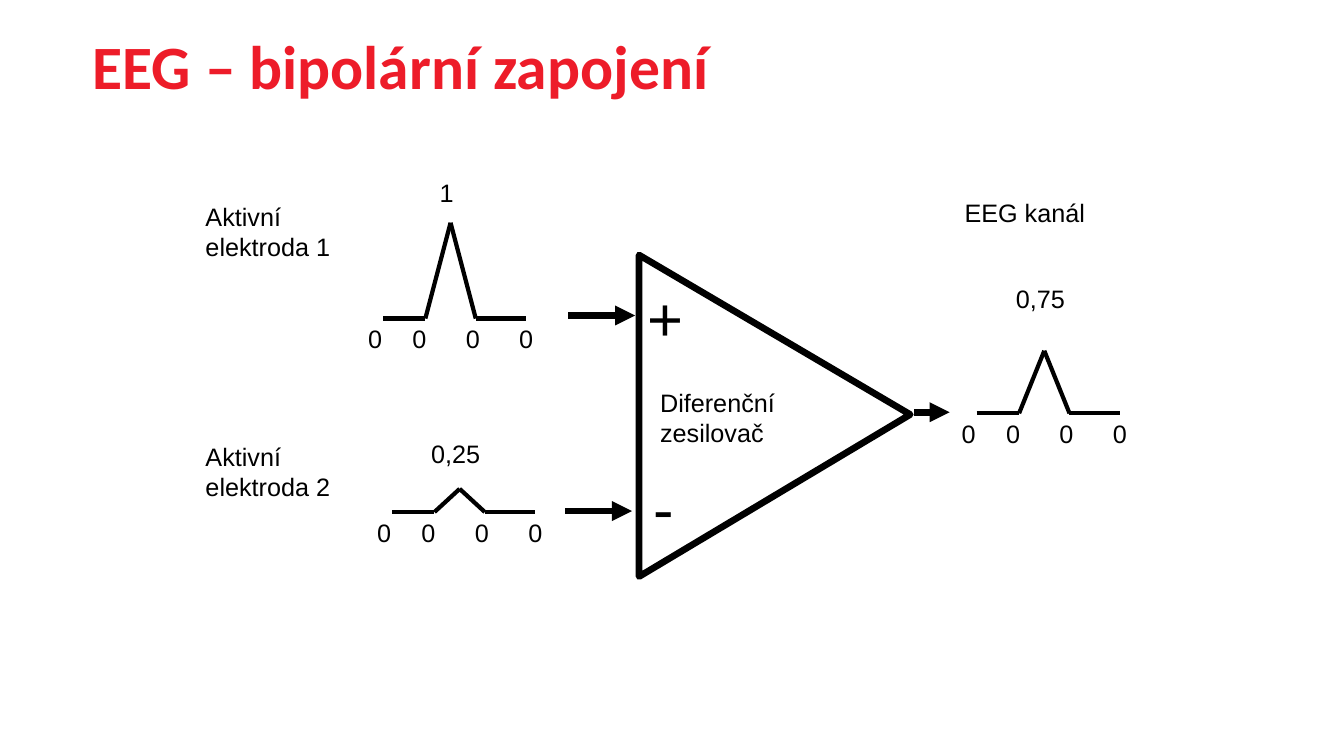
from itertools import pairwise

from lxml import etree
from pptx import Presentation
from pptx.dml.color import RGBColor
from pptx.enum.shapes import MSO_CONNECTOR, MSO_SHAPE
from pptx.enum.text import MSO_ANCHOR, MSO_AUTO_SIZE, PP_ALIGN
from pptx.oxml.ns import qn
from pptx.util import Inches, Pt

STRAIGHT = MSO_CONNECTOR.STRAIGHT
TRIANGLE = MSO_SHAPE.ISOSCELES_TRIANGLE
TOP = MSO_ANCHOR.TOP
FIT = MSO_AUTO_SIZE.SHAPE_TO_FIT_TEXT
NO_FIT = MSO_AUTO_SIZE.NONE
LEFT, CENTER = PP_ALIGN.LEFT, PP_ALIGN.CENTER

BLACK = RGBColor(0x00, 0x00, 0x00)
RED = RGBColor(0xED, 0x1C, 0x29)
COLS, ROWS = 133.33, 75
CELL = Inches(0.1)
THICK, THIN = 4.75, 3
KNOTS = (0, 4.2, 6.7, 9.2, 14.2)
ZEROS = (-0.8, 3.6, 8.9, 14.2)


def grid(*cells):
    """Turn counts of grid cells into lengths."""
    return [round(cell * CELL) for cell in cells]


def style(para, size, name="Arial", color=BLACK, bold=False):
    """Set the font of a paragraph."""
    font = para.font
    font.size, font.name, font.bold = Pt(size), name, bold
    font.color.rgb = color


def add_text(shapes, text, box, size=18, align=LEFT, wrap=True):
    """Add a text box that grows with its text."""
    frame = shapes.add_textbox(*grid(*box)).text_frame
    frame.word_wrap = wrap
    frame.auto_size = FIT
    para = frame.paragraphs[0]
    para.text = text
    para.alignment = align
    style(para, size)


def add_mark(shapes, text, mid, top):
    """Add a short label centred on a column."""
    add_text(shapes, text, (mid - 3.45, top, 6.9, 4), align=CENTER, wrap=False)


def add_line(shapes, start, end, width):
    """Add a plain black line."""
    line = shapes.add_connector(STRAIGHT, *grid(*start, *end))
    line.line.color.rgb = BLACK
    line.line.width = Pt(width)
    etree.SubElement(line._element.spPr, qn("a:effectLst"))
    return line


def add_arrow(shapes, left, row, length):
    """Add a thick arrow that points right."""
    line = add_line(shapes, (left, row), (left + length, row), THICK)
    etree.SubElement(line.line._get_or_add_ln(), qn("a:tailEnd"), type="triangle")


def add_wave(slide, left, base, height, peak, top):
    """Add a grouped spike with its peak and zero labels."""
    shapes = slide.shapes.add_group_shape().shapes
    rows = (base, base, base - height, base, base)
    points = [(left + knot, row) for knot, row in zip(KNOTS, rows)]
    for start, end in pairwise(points):
        add_line(shapes, start, end, THIN)
    add_mark(shapes, peak, left + 6.3, top)
    for shift in ZEROS:
        add_mark(shapes, "0", left + shift, base)


def add_amp(shapes, left, top, width, height):
    """Add the amplifier triangle that points right."""
    box = (left + (width - height) / 2, top + (height - width) / 2, height, width)
    amp = shapes.add_shape(TRIANGLE, *grid(*box))
    amp.rotation = 90
    amp.adjustments[0] = 0.496
    amp.shadow.inherit = False
    amp.fill.background()
    amp.line.color.rgb = BLACK
    amp.line.width = Pt(THICK)


def set_title(slide, text):
    """Fill and place the title."""
    title = slide.shapes.title
    title.left, title.top, title.width, title.height = grid(8.2, 2.3, 93.1, 8.4)
    frame = title.text_frame
    frame.text = text
    frame.vertical_anchor = TOP
    frame.auto_size = NO_FIT
    para = frame.paragraphs[0]
    para.alignment = LEFT
    style(para, 44, "Calibri", RED, True)


def main():
    """Build the slide and save it."""
    deck = Presentation()
    deck.slide_width, deck.slide_height = grid(COLS, ROWS)
    slide = deck.slides.add_slide(deck.slide_layouts[5])
    shapes = slide.shapes
    set_title(slide, "EEG – bipolární zapojení")

    add_amp(shapes, 63.4, 25.3, 26.9, 31.9)
    for sign, left, top, width in (("+", 63.3, 27.3, 5.6), ("-", 63.8, 46.1, 4.1)):
        add_text(shapes, sign, (left, top, width, 8.4), size=44, wrap=False)
    for arrow in ((56.4, 31.3, 6.6), (56.1, 50.7, 6.6), (90.7, 40.9, 3.5)):
        add_arrow(shapes, *arrow)

    add_wave(slide, 38, 31.6, 9.5, "1", 17.1)
    add_wave(slide, 38.9, 50.8, 2.3, "0,25", 43)
    add_wave(slide, 96.9, 41, 6.2, "0,75", 27.6)

    for text, box in (
        ("Aktivní elektroda 1", (19.4, 19.5, 17.9, 7.1)),
        ("Aktivní elektroda 2", (19.4, 43.3, 17.9, 7.1)),
        ("EEG kanál", (94.7, 19.1, 24.1, 4)),
        ("Diferenční zesilovač", (64.5, 37.9, 24.1, 7.1)),
    ):
        add_text(shapes, text, box)
    deck.save("out.pptx")


if __name__ == "__main__":
    main()
